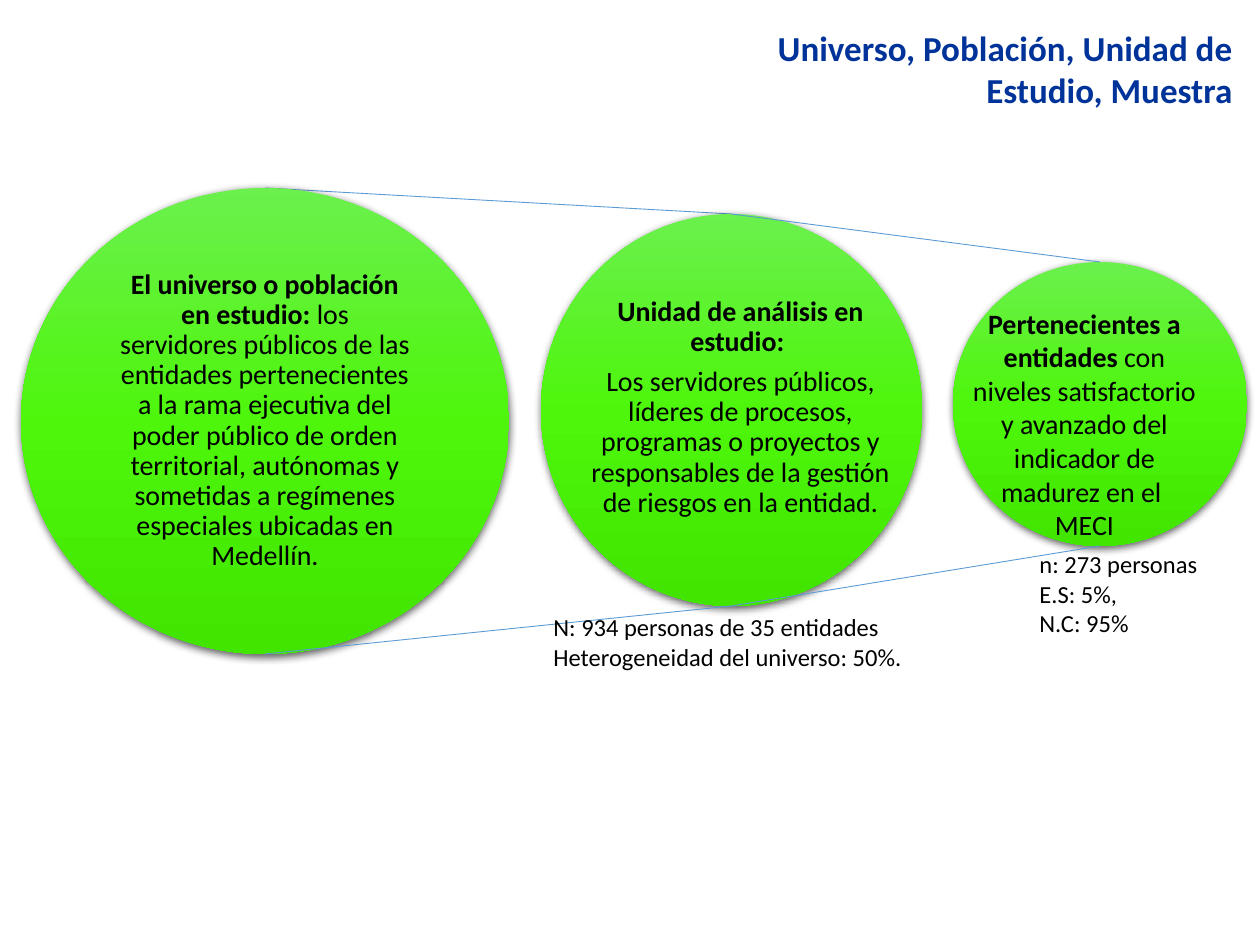
from lxml import etree
from pptx import Presentation
from pptx.dml.color import RGBColor
from pptx.enum.shapes import MSO_CONNECTOR, MSO_SHAPE
from pptx.enum.text import MSO_ANCHOR, MSO_AUTO_SIZE, PP_ALIGN
from pptx.oxml import parse_xml
from pptx.oxml.ns import nsdecls, qn
from pptx.util import Emu, Pt

LEFT, CENTER, RIGHT = PP_ALIGN.LEFT, PP_ALIGN.CENTER, PP_ALIGN.RIGHT
FIT_SHAPE = MSO_AUTO_SIZE.SHAPE_TO_FIT_TEXT
MIDDLE = MSO_ANCHOR.MIDDLE
OVAL = MSO_SHAPE.OVAL
STRAIGHT = MSO_CONNECTOR.STRAIGHT

BLACK = RGBColor(0x00, 0x00, 0x00)
NAVY = RGBColor(0x00, 0x33, 0x99)
BLUE = RGBColor(0x5B, 0x9B, 0xD5)
GREENS = [RGBColor(0x6B, 0xF0, 0x4D), RGBColor(0x4E, 0xF6, 0x0C), RGBColor(0x41, 0xE5, 0x00)]
FONT = "Calibri"
PX = 914400 / 126


def px(*lengths):
    """Turn pixel lengths into EMU."""
    return [Emu(round(length * PX)) for length in lengths]


def write(text_frame, paragraphs, size, align=LEFT, color=BLACK, spacing=None, after=0):
    """Fill a frame with paragraphs, each a list of (text, bold) runs."""
    text_frame.word_wrap = True
    for index, runs in enumerate(paragraphs):
        paragraph = text_frame.add_paragraph() if index else text_frame.paragraphs[0]
        paragraph.alignment = align
        paragraph.space_after = Pt(after)
        if spacing:
            paragraph.line_spacing = spacing
        for text, bold in runs:
            run = paragraph.add_run()
            run.text = text
            run.font.name = FONT
            run.font.size = Pt(size)
            run.font.bold = bold
            run.font.color.rgb = color


presentation = Presentation()
presentation.slide_width, presentation.slide_height = px(1260, 945)
slide = presentation.slides.add_slide(presentation.slide_layouts[6])

# Circles: left, top, width, height
circles = [(21, 188, 488, 466), (541, 214, 381, 392), (953, 262, 294, 284)]
tops = [(left + width // 2, top) for left, top, width, height in circles]
bottoms = [(x, top + circle[3]) for (x, top), circle in zip(tops, circles)]

stops = "".join(
    f'<a:gs pos="{index * 50000}"><a:srgbClr val="{green}"/></a:gs>'
    for index, green in enumerate(GREENS)
)
GRADIENT = (f'<a:gradFill {nsdecls("a")} rotWithShape="1"><a:gsLst>{stops}</a:gsLst>'
            '<a:lin ang="5400000" scaled="0"/></a:gradFill>')
SHADOW = (f'<a:effectLst {nsdecls("a")}><a:outerShdw blurRad="57150" dist="19050" '
          'dir="5400000" algn="ctr" rotWithShape="0"><a:srgbClr val="000000">'
          '<a:alpha val="63000"/></a:srgbClr></a:outerShdw></a:effectLst>')

# The first line lies behind the circles, the others in front
ovals = []
lines = [(tops[0], tops[1]), (tops[1], tops[2]),
         (bottoms[0], bottoms[1]), (bottoms[1], bottoms[2])]
for index, (start, end) in enumerate(lines):
    if index == 1:
        for circle in circles:
            oval = slide.shapes.add_shape(OVAL, *px(*circle))
            oval.line.fill.background()
            properties = oval._element.spPr
            properties.find(qn("a:ln")).addprevious(parse_xml(GRADIENT))
            properties.append(parse_xml(SHADOW))
            ovals.append(oval)
    connector = slide.shapes.add_connector(STRAIGHT, *px(*start, *end))
    connector.line.color.rgb = BLUE
    connector.line.width = Pt(0.5)
    etree.SubElement(connector._element.spPr, qn("a:effectLst"))

universe = ovals[0].text_frame
universe.vertical_anchor = MIDDLE
universe.margin_left, universe.margin_right = px(27, 27)
universe.margin_top = universe.margin_bottom = 0
write(universe, [[
    ("El universo o población en estudio: ", True),
    ("los servidores públicos de las entidades pertenecientes a la rama ejecutiva del "
     "poder público de orden territorial, autónomas y sometidas a regímenes especiales "
     "ubicadas en Medellín.", False),
]], 16, CENTER, spacing=0.9, after=5.6)

analysis_unit = [
    [("Unidad de análisis en estudio: ", True)],
    [("Los servidores públicos, líderes de procesos, programas o proyectos y "
      "responsables de la gestión de riesgos en la entidad.", False)],
]
sample = [
    [("Pertenecientes a entidades ", True),
     ("con niveles satisfactorio y avanzado del indicador de madurez en el ", False)],
    [("MECI", False)],
]
sample_size = [[(text, False)] for text in ("n: 273 personas", "E.S: 5%,", "N.C: 95%")]
population_size = [[(text, False)] for text in (
    "N: 934 personas de 35 entidades", "Heterogeneidad del universo: 50%.")]
title = [[("Universo, Población, Unidad de Estudio, Muestra", True)]]

# Text boxes: position, paragraphs, size, alignment, colour, line spacing, space after
text_boxes = [
    ((568, 291, 345, 238), analysis_unit, 16, CENTER, BLACK, 0.9, 5.6),
    ((953, 300, 263, 251), sample, 16, CENTER, BLACK, None, 0),
    ((1027, 543, 220, 102), sample_size, 14, LEFT, BLACK, None, 0),
    ((541, 606, 381, 72), population_size, 14, LEFT, BLACK, None, 0),
    ((759, 20, 486, 97), title, 20, RIGHT, NAVY, None, 0),
]
for position, paragraphs, *style in text_boxes:
    text_frame = slide.shapes.add_textbox(*px(*position)).text_frame
    write(text_frame, paragraphs, *style)
    text_frame.auto_size = FIT_SHAPE

presentation.save("out.pptx")
